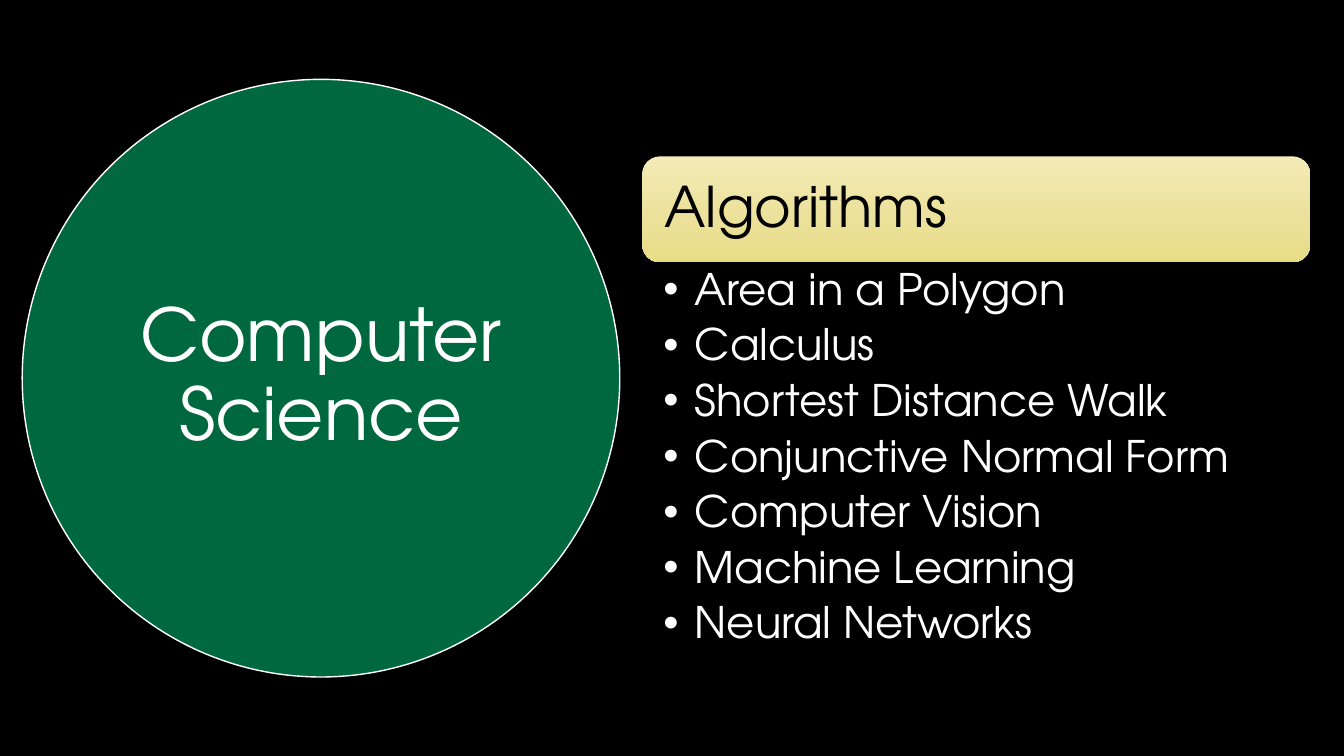
from copy import deepcopy

from lxml import etree
from pptx import Presentation
from pptx.dml.color import RGBColor
from pptx.enum.shapes import MSO_SHAPE
from pptx.enum.text import MSO_ANCHOR, MSO_AUTO_SIZE, PP_ALIGN
from pptx.oxml.ns import qn
from pptx.util import Cm, Pt

OVAL, ROUNDED = MSO_SHAPE.OVAL, MSO_SHAPE.ROUNDED_RECTANGLE
TOP, MIDDLE = MSO_ANCHOR.TOP, MSO_ANCHOR.MIDDLE
LEFT, CENTER = PP_ALIGN.LEFT, PP_ALIGN.CENTER
NO_AUTOFIT = MSO_AUTO_SIZE.NONE

FONT = "TeX Gyre Adventor"
COLORS = {"background": "000000", "light": "FFFFFF", "dark": "000000", "circle": "01D17D"}
HEADER_GRADIENT = [(0, "F4ECB9"), (0.52, "ECE29D"), (1, "E8DC87")]
TOPICS = [
    "Area in a Polygon",
    "Calculus",
    "Shortest Distance Walk",
    "Conjunctive Normal Form",
    "Computer Vision",
    "Machine Learning",
    "Neural Networks",
]
COLUMN_LEFT, COLUMN_WIDTH = 16.19, 16.83


def color(name):
    return RGBColor.from_string(COLORS[name])


def set_attributes(target, values):
    for name, value in values.items():
        setattr(target, name, value)


def place(shape, left, top, width, height):
    set_attributes(shape, {"left": Cm(left), "top": Cm(top),
                           "width": Cm(width), "height": Cm(height)})


def add_bullet(paragraph):
    properties = paragraph._p.get_or_add_pPr()
    properties.set("marL", str(Cm(0.79)))
    properties.set("indent", str(-Cm(0.79)))
    etree.SubElement(properties, qn("a:buChar")).set("char", "•")


def write_text(shape, lines, size, text_color, anchor, margins, align=LEFT,
               space_after=0, bullets=False):
    left, top, right, bottom = [Cm(margin) for margin in margins]
    frame = shape.text_frame
    set_attributes(frame, {
        "text": "\n".join(lines), "word_wrap": True, "auto_size": NO_AUTOFIT,
        "vertical_anchor": anchor, "margin_left": left, "margin_top": top,
        "margin_right": right, "margin_bottom": bottom,
    })
    for paragraph in frame.paragraphs:
        set_attributes(paragraph, {
            "level": int(bullets), "alignment": align, "line_spacing": 0.9,
            "space_before": Pt(0), "space_after": Pt(space_after),
        })
        if bullets:
            add_bullet(paragraph)
        set_attributes(paragraph.font, {"name": FONT, "size": Pt(size)})
        paragraph.font.color.rgb = color(text_color)


def add_circle(slide):
    circle = slide.shapes.add_shape(OVAL, Cm(0.56), Cm(2), Cm(15.06), Cm(15.06))
    circle.shadow.inherit = False
    circle.fill.solid()
    circle.fill.fore_color.rgb = color("circle")
    fill_color = circle._element.spPr.find(qn("a:solidFill"))[0]
    etree.SubElement(fill_color, qn("a:alpha")).set("val", "50000")
    circle.line.color.rgb = color("light")
    circle.line.width = Pt(1)
    slide.shapes._spTree.insert(2, circle._element)


def add_header(slide, text):
    header = slide.shapes.add_shape(ROUNDED, Cm(COLUMN_LEFT), Cm(3.94),
                                    Cm(COLUMN_WIDTH), Cm(2.67))
    header.shadow.inherit = False
    header.line.fill.background()
    header.fill.gradient()
    header.fill.gradient_angle = 270
    stops = header._element.spPr.find(qn("a:gradFill")).find(qn("a:gsLst"))
    stops.insert(1, deepcopy(stops[0]))
    for stop, (position, value) in zip(header.fill.gradient_stops, HEADER_GRADIENT):
        stop.position = position
        stop.color.rgb = RGBColor.from_string(value)
    write_text(header, [text], 40, "dark", MIDDLE, [0.43] * 4)


def main():
    presentation = Presentation()
    presentation.slide_width, presentation.slide_height = Cm(33.87), Cm(19.05)
    slide = presentation.slides.add_slide(presentation.slide_layouts[1])
    slide.background.fill.solid()
    slide.background.fill.fore_color.rgb = color("background")

    add_circle(slide)
    title = slide.shapes.title
    place(title, 2.77, 4.19, 10.64, 10.64)
    write_text(title, ["Computer Science"], 52, "light", MIDDLE, [0] * 4, CENTER)

    add_header(slide, "Algorithms")
    topics = slide.placeholders[1]
    place(topics, COLUMN_LEFT, 6.6, COLUMN_WIDTH, 10.34)
    write_text(topics, TOPICS, 31, "light", TOP, [0.53, 0.15, 0.79, 0.15],
               space_after=6.2, bullets=True)

    presentation.save("out.pptx")


if __name__ == "__main__":
    main()
